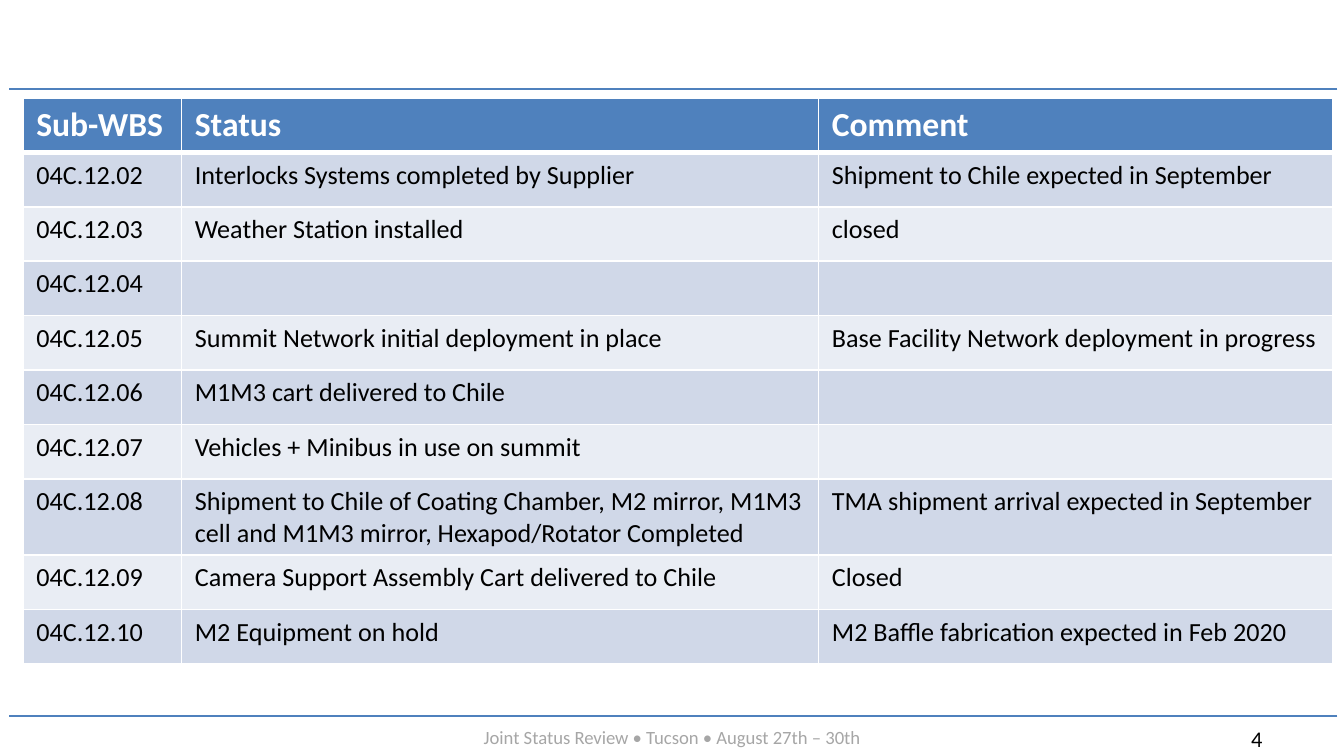
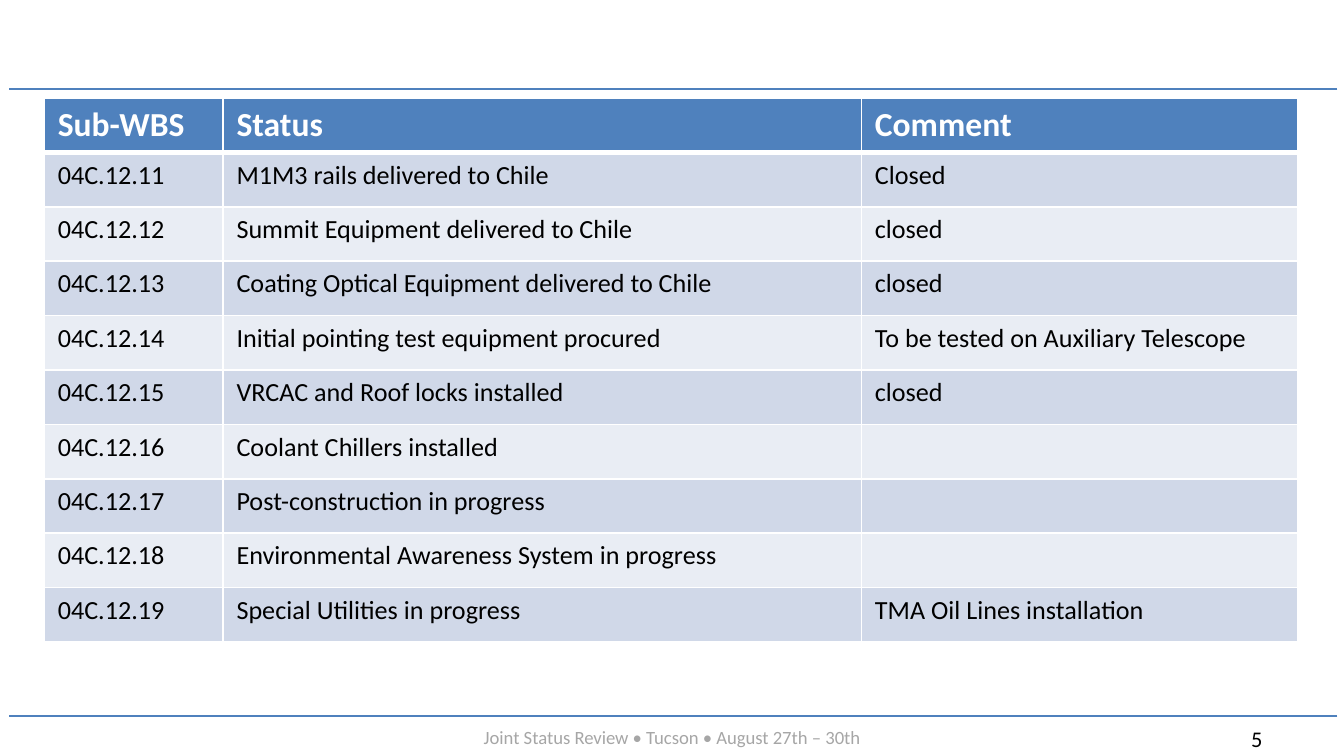
from lxml import etree
from pptx import Presentation
from pptx.dml.color import RGBColor
from pptx.enum.shapes import MSO_CONNECTOR
from pptx.enum.text import MSO_AUTO_SIZE, PP_ALIGN
from pptx.oxml.ns import qn
from pptx.util import Emu, Pt

LINE = MSO_CONNECTOR.STRAIGHT
GROW = MSO_AUTO_SIZE.SHAPE_TO_FIT_TEXT
LEFT, CENTER = PP_ALIGN.LEFT, PP_ALIGN.CENTER

SCALE = 4572  # EMU per px, 200 px to the inch
FACE = "Calibri"
BLUE, WHITE, BLACK, GRAY = "4F81BD", "FFFFFF", "000000", "A6A6A6"
BANDS = ("D0D8E8", "E9EDF4")
FOOTER = "Joint Status Review • Tucson • August 27th – 30th"
HEADS = ("Sub-WBS", "Status", "Comment")
TOP, ROW = 146, 81

FIRST = [
    ("04C.12.02", "Interlocks Systems completed by Supplier",
     "Shipment to Chile expected in September"),
    ("04C.12.03", "Weather Station installed", "closed"),
    ("04C.12.04", "", ""),
    ("04C.12.05", "Summit Network initial deployment in place",
     "Base Facility Network deployment in progress"),
    ("04C.12.06", "M1M3 cart delivered to Chile", ""),
    ("04C.12.07", "Vehicles + Minibus in use on summit", ""),
    ("04C.12.08", "Shipment to Chile of Coating Chamber, M2 mirror, M1M3 cell "
     "and M1M3 mirror, Hexapod/Rotator Completed",
     "TMA shipment arrival expected in September"),
    ("04C.12.09", "Camera Support Assembly Cart delivered to Chile", "Closed"),
    ("04C.12.10", "M2 Equipment on hold",
     "M2 Baffle fabrication expected in Feb 2020"),
]
SECOND = [
    ("04C.12.11", "M1M3 rails delivered to Chile", "Closed"),
    ("04C.12.12", "Summit Equipment delivered to Chile", "closed"),
    ("04C.12.13", "Coating Optical Equipment delivered to Chile", "closed"),
    ("04C.12.14", "Initial pointing test equipment procured",
     "To be tested on Auxiliary Telescope"),
    ("04C.12.15", "VRCAC and Roof locks installed", "closed"),
    ("04C.12.16", "Coolant Chillers installed", ""),
    ("04C.12.17", "Post-construction in progress", ""),
    ("04C.12.18", "Environmental Awareness System in progress", ""),
    ("04C.12.19", "Special Utilities in progress", "TMA Oil Lines installation"),
]


def px(count):
    return Emu(count * SCALE)


def rgb(code):
    return RGBColor.from_string(code)


def style(para, size, color, bold=False):
    font = para.font
    font.name, font.size, font.bold = FACE, Pt(size), bold
    font.color.rgb = rgb(color)


def add_rule(slide, top):
    rule = slide.shapes.add_connector(LINE, px(1990), px(top), px(14), px(top))
    rule.line.color.rgb = rgb(BLUE)
    rule.line.width = Pt(1)
    etree.SubElement(rule._element.spPr, qn("a:effectLst"))


def add_text(slide, text, left, top, width, height, size, color, align=LEFT):
    box = slide.shapes.add_textbox(px(left), px(top), px(width), px(height))
    frame = box.text_frame
    frame.word_wrap = True
    frame.auto_size = GROW
    para = frame.paragraphs[0]
    para.text = text
    para.alignment = align
    style(para, size, color)


def add_frame(slide, number):
    """Rules, page number and footer shared by all slides."""
    add_rule(slide, 1066)
    add_text(slide, str(number), 1842, 1070, 124, 60, 12, BLACK)
    add_text(slide, FOOTER, 100, 1070, 1800, 54, 10, GRAY, CENTER)
    add_rule(slide, 132)


def add_edges(cell, row):
    """White borders, thicker between the heading and the first row."""
    widths = {"L": 1, "R": 1, "T": 3 if row == 1 else 1, "B": 3 if row == 0 else 1}
    props = cell._tc.get_or_add_tcPr()
    for side, width in widths.items():
        edge = etree.SubElement(props, qn(f"a:ln{side}"), w=str(Pt(width)))
        fill = etree.SubElement(edge, qn("a:solidFill"))
        etree.SubElement(fill, qn("a:srgbClr"), val=WHITE)


def fill_cell(cell, text, row):
    add_edges(cell, row)
    cell.fill.solid()
    cell.fill.fore_color.rgb = rgb(BANDS[(row - 1) % 2] if row else BLUE)
    para = cell.text_frame.paragraphs[0]
    if text:
        para.text = text
    if row:
        style(para, 14, BLACK)
    else:
        style(para, 18, WHITE, True)


def add_status(slide, left, widths, items):
    rows = [HEADS, *items]
    table = slide.shapes.add_table(
        len(rows), len(widths), px(left), px(TOP),
        px(sum(widths)), px(ROW * len(rows))).table
    for column, width in zip(table.columns, widths):
        column.width = px(width)
    for r, texts in enumerate(rows):
        table.rows[r].height = px(ROW)
        for c, text in enumerate(texts):
            fill_cell(table.cell(r, c), text, r)


def main():
    deck = Presentation()
    deck.slide_width, deck.slide_height = px(2000), px(1125)
    pages = [
        (34, (236, 948, 766), FIRST),
        (66, (266, 950, 650), SECOND),
    ]
    for number, (left, widths, items) in enumerate(pages, 4):
        slide = deck.slides.add_slide(deck.slide_layouts[6])
        add_frame(slide, number)
        add_status(slide, left, widths, items)
    deck.save("out.pptx")


if __name__ == "__main__":
    main()
